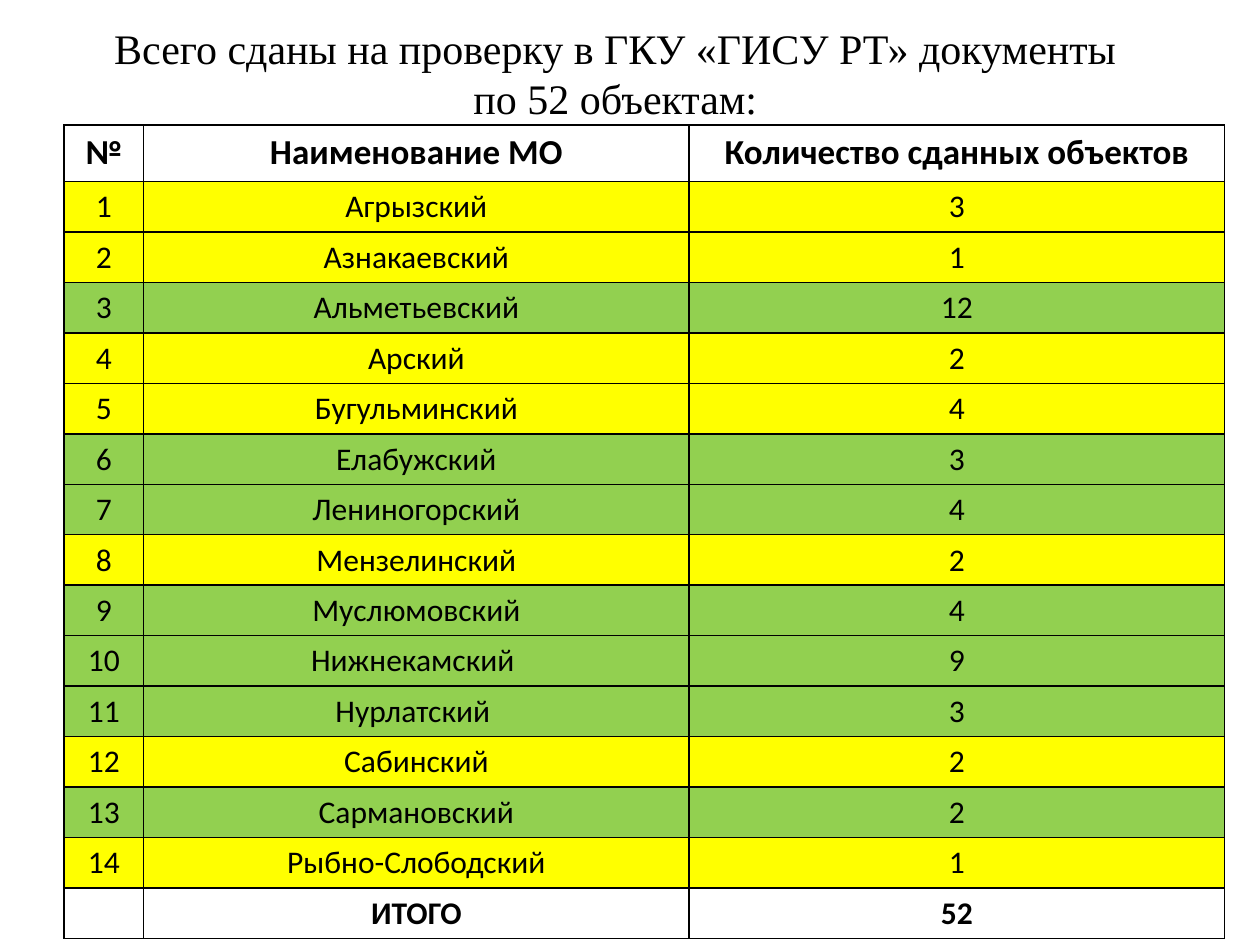
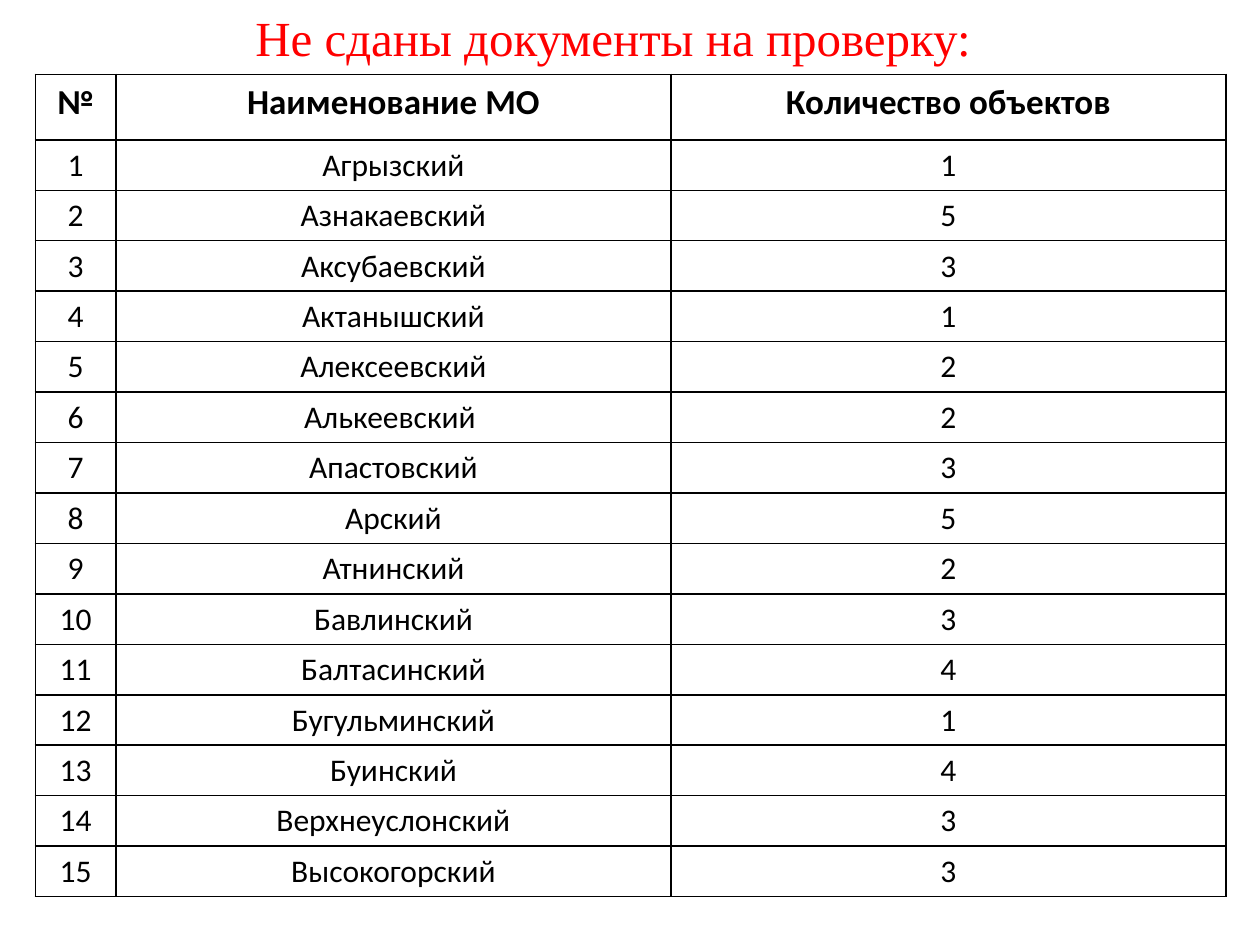
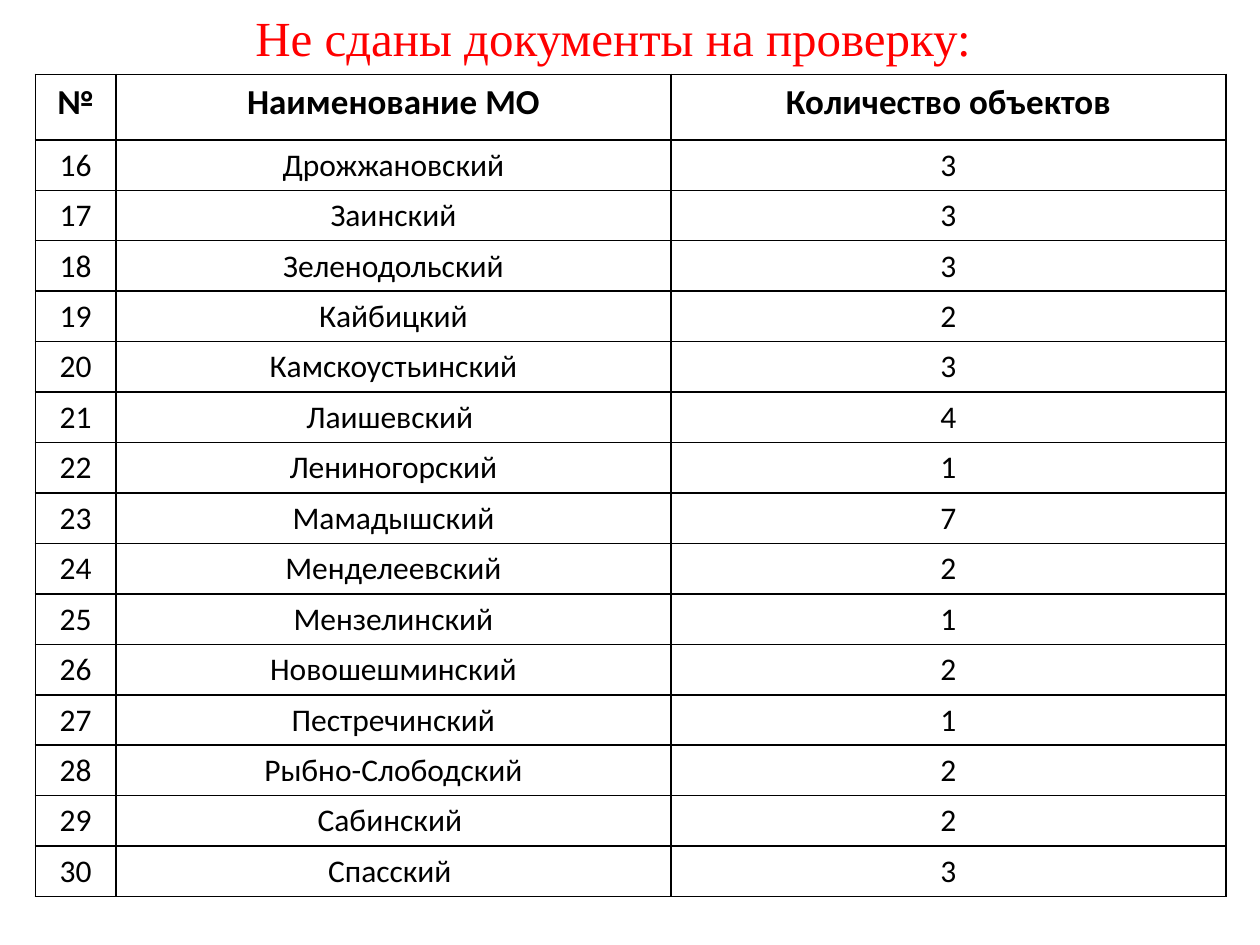
from lxml.etree import SubElement as Sub
from pptx import Presentation
from pptx.dml.color import RGBColor as Rgb
from pptx.enum.text import MSO_ANCHOR as Anchor, PP_ALIGN as Align
from pptx.oxml.ns import qn
from pptx.util import Inches, Pt

WIDE, HIGH = Inches(10), Inches(7.5)
BLACK = Rgb(0, 0, 0)
RED = Rgb(255, 0, 0)
YELLOW = Rgb(255, 255, 0)
GREEN = Rgb(146, 208, 80)
SERIF, SANS = "Times New Roman", "Calibri"

HEAD = ("№", "Наименование МО")
DONE = [
    ("Агрызский", 3, YELLOW), ("Азнакаевский", 1, YELLOW),
    ("Альметьевский", 12, GREEN), ("Арский", 2, YELLOW),
    ("Бугульминский", 4, YELLOW), ("Елабужский", 3, GREEN),
    ("Лениногорский", 4, GREEN), ("Мензелинский", 2, YELLOW),
    ("Муслюмовский", 4, GREEN), ("Нижнекамский ", 9, GREEN),
    ("Нурлатский ", 3, GREEN), ("Сабинский", 2, YELLOW),
    ("Сармановский", 2, GREEN), ("Рыбно-Слободский", 1, YELLOW),
]
LATE = [
    ("Агрызский", 1), ("Азнакаевский", 5), ("Аксубаевский", 3),
    ("Актанышский", 1), ("Алексеевский", 2), ("Алькеевский ", 2),
    ("Апастовский", 3), ("Арский", 5), ("Атнинский", 2),
    ("Бавлинский", 3), ("Балтасинский", 4), ("Бугульминский", 1),
    ("Буинский", 4), ("Верхнеуслонский", 3), ("Высокогорский", 3),
    ("Дрожжановский", 3), ("Заинский", 3), ("Зеленодольский", 3),
    ("Кайбицкий", 2), ("Камскоустьинский", 3), ("Лаишевский ", 4),
    ("Лениногорский", 1), ("Мамадышский", 7), ("Менделеевский", 2),
    ("Мензелинский", 1), ("Новошешминский", 2), ("Пестречинский", 1),
    ("Рыбно-Слободский", 2), ("Сабинский ", 2), ("Спасский ", 3),
]
PAGE = 15


def place(left, top, wide, high):
    return [round(size * share / 100) for size, share in
            ((WIDE, left), (HIGH, top), (WIDE, wide), (HIGH, high))]


def write(frame, text, size=18, font=SANS, color=BLACK, bold=False):
    for num, line in enumerate(text.split("\n")):
        para = frame.add_paragraph() if num else frame.paragraphs[0]
        para.alignment = Align.CENTER
        run = para.add_run()
        run.text = line
        run.font.size, run.font.name, run.font.bold = Pt(size), font, bold
        run.font.color.rgb = color


def title(slide, box, text, **look):
    frame = slide.shapes.add_textbox(*box).text_frame
    frame.word_wrap = True
    frame.vertical_anchor = Anchor.MIDDLE
    write(frame, text, font=SERIF, **look)


def edge(cell):
    props = cell._tc.get_or_add_tcPr()
    for num, side in enumerate(("lnL", "lnR", "lnT", "lnB")):
        line = props.makeelement(qn(f"a:{side}"), {"w": str(Pt(1))})
        fill = Sub(line, qn("a:solidFill"))
        Sub(fill, qn("a:srgbClr"), val=str(BLACK))
        props.insert(num, line)


def grid(slide, box, cols, top, rows):
    left, up, wide, high = box
    table = slide.shapes.add_table(len(rows), len(cols), *box).table
    table.first_row = table.horz_banding = False
    for col, share in zip(table.columns, cols):
        col.width = round(wide * share / sum(cols))
    first = round(high * top)
    step = round((high - first) / (len(rows) - 1))
    for num, (texts, fill, look) in enumerate(rows):
        table.rows[num].height = step if num else first
        for cell, text in zip(table.rows[num].cells, texts):
            if fill is None:
                cell.fill.background()
            else:
                cell.fill.solid()
                cell.fill.fore_color.rgb = fill
            edge(cell)
            write(cell.text_frame, str(text), **look)


def header(count):
    return (*HEAD, count), None, {"size": 20, "bold": True}


def passed(slide):
    total = sum(count for _, count, _ in DONE)
    title(slide, place(1.2, 1.6, 96.1, 12.13),
          "Всего сданы на проверку в ГКУ «ГИСУ РТ» документы \n"
          f"по {total} объектам: ", size=24)
    rows = [header("Количество сданных объектов")]
    rows += [((num, name, count), fill, {})
             for num, (name, count, fill) in enumerate(DONE, 1)]
    rows.append((("", "ИТОГО", total), None, {"bold": True}))
    grid(slide, place(5.1, 13.2, 92.1, 85.87), (0.63, 4.33, 4.25), 0.07, rows)


def missing(slide, start):
    title(slide, place(0.6, 0.13, 96.1, 7.6),
          "Не сданы документы на проверку:", size=28, color=RED)
    rows = [header("Количество объектов")]
    rows += [((num, name, count), None, {}) for num, (name, count)
             in enumerate(LATE[start:start + PAGE], start + 1)]
    grid(slide, place(2.8, 7.87, 94.5, 86.67), (0.64, 4.4, 4.4), 0.08, rows)


def main():
    deck = Presentation()
    deck.slide_width, deck.slide_height = WIDE, HIGH
    blank = deck.slide_layouts[6]
    passed(deck.slides.add_slide(blank))
    for start in range(0, len(LATE), PAGE):
        missing(deck.slides.add_slide(blank), start)
    deck.save("out.pptx")


if __name__ == "__main__":
    main()
